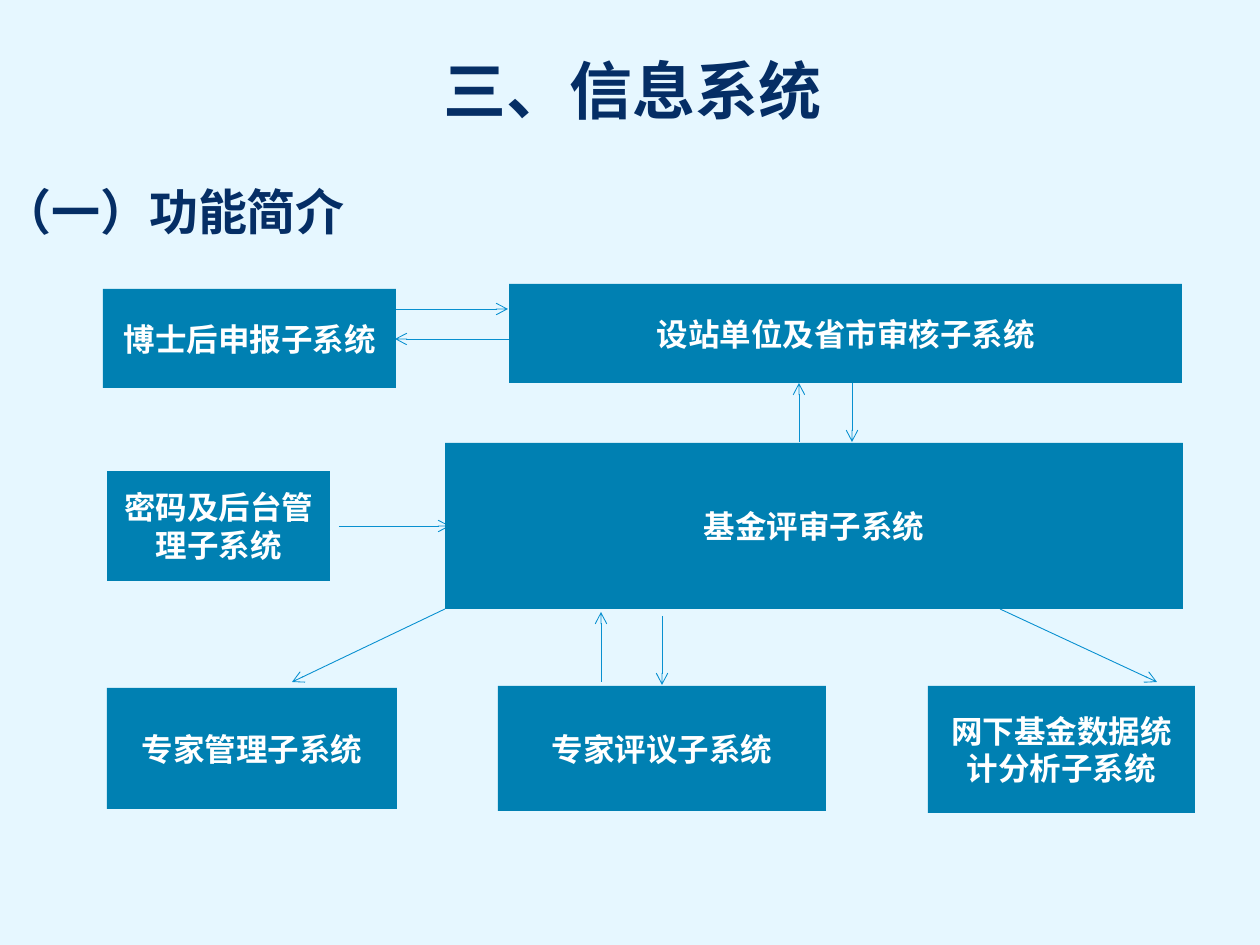
from pptx import Presentation
from pptx.dml.color import RGBColor
from pptx.enum.shapes import MSO_CONNECTOR as CONN, MSO_SHAPE as SHAPE
from pptx.enum.text import MSO_ANCHOR as ANCHOR, MSO_AUTO_SIZE as FIT, PP_ALIGN as ALIGN
from pptx.oxml.ns import qn
from pptx.util import Emu, Pt
from lxml import etree

EMU_PER_PX = 914400 / 126
FONT = "Noto Sans CJK SC"
BACKGROUND = RGBColor(0xE6, 0xF7, 0xFF)
NAVY = RGBColor(0x05, 0x2E, 0x65)
BLUE = RGBColor(0x00, 0x80, 0xB2)
ARROW_BLUE = RGBColor(0x08, 0x90, 0xD0)
WHITE = RGBColor(0xFF, 0xFF, 0xFF)


def px(*lengths):
    return [Emu(round(n * EMU_PER_PX)) for n in lengths]


class FlowSlide:
    """Style and drawing methods for the system diagram."""

    def __init__(self, prs):
        self.slide = prs.slides.add_slide(prs.slide_layouts[5])
        fill = self.slide.background.fill
        fill.solid()
        fill.fore_color.rgb = BACKGROUND

    def set_text(self, sp, text, size, color, align, anchor):
        tf = sp.text_frame
        frame = {"word_wrap": True, "auto_size": FIT.NONE, "vertical_anchor": anchor}
        for name, value in frame.items():
            setattr(tf, name, value)
        p = tf.paragraphs[0]
        p.alignment = align
        r = p.add_run()
        r.text = text
        r.font.color.rgb = color
        for name, value in {"size": Pt(size), "bold": True, "name": FONT}.items():
            setattr(r.font, name, value)
        # East Asian glyphs take their own typeface element
        etree.SubElement(r.font._element, qn("a:ea"), typeface=FONT)
        return p

    def title(self, text, *box):
        sp = self.slide.shapes.title
        for name, value in zip(("left", "top", "width", "height"), px(*box)):
            setattr(sp, name, value)
        self.set_text(sp, text, 36, NAVY, ALIGN.CENTER, ANCHOR.MIDDLE)

    def heading(self, text, *box):
        sp = self.slide.shapes.add_textbox(*px(*box))
        p = self.set_text(sp, text, 28, NAVY, ALIGN.LEFT, ANCHOR.TOP)
        p.space_before = Pt(4)

    def box(self, text, *box):
        sp = self.slide.shapes.add_shape(SHAPE.RECTANGLE, *px(*box))
        sp.shadow.inherit = False
        sp.fill.solid()
        sp.fill.fore_color.rgb = BLUE
        sp.line.fill.background()
        self.set_text(sp, text, 18, WHITE, ALIGN.CENTER, ANCHOR.MIDDLE)

    def arrow(self, *ends):
        sp = self.slide.shapes.add_connector(CONN.STRAIGHT, *px(*ends))
        sp.line.color.rgb = ARROW_BLUE
        sp.line.width = Pt(0.5)
        sp_pr = sp._element.spPr
        etree.SubElement(sp_pr.find(qn("a:ln")), qn("a:tailEnd"), type="arrow")
        etree.SubElement(sp_pr, qn("a:effectLst"))


# Start and end points: x1, y1, x2, y2
ARROWS = [
    (396, 309, 508, 309),    # application to review by units
    (509, 339, 395, 339),
    (339, 526, 450, 526),    # back office to fund review
    (799, 442, 799, 383),    # fund review and review by units
    (852, 383, 852, 442),
    (601, 682, 601, 612),    # fund review and expert appraisal
    (662, 616, 662, 685),
    (445, 609, 292, 682),    # fund review to expert management
    (1000, 609, 1157, 682),  # fund review to data analysis
]

# Text, then left, top, width, height
SYSTEMS = [
    ("博士后申报子系统", 103, 289, 293, 99),
    ("设站单位及省市审核子系统", 509, 284, 673, 99),
    ("密码及后台管理子系统", 107, 471, 223, 110),
    ("基金评审子系统", 445, 443, 738, 166),
    ("专家管理子系统", 107, 688, 290, 121),
    ("专家评议子系统", 498, 686, 328, 125),
    ("网下基金数据统计分析子系统", 928, 686, 267, 127),
]


def main():
    prs = Presentation()
    prs.slide_width, prs.slide_height = px(1260, 945)
    s = FlowSlide(prs)

    # Headings
    s.title("三、信息系统", 24, 45, 1217, 88)
    s.heading("（一）功能简介", -10, 175, 1076, 79)

    # Arrows lie behind the boxes
    for ends in ARROWS:
        s.arrow(*ends)
    for system in SYSTEMS:
        s.box(*system)

    prs.save("out.pptx")


if __name__ == "__main__":
    main()
